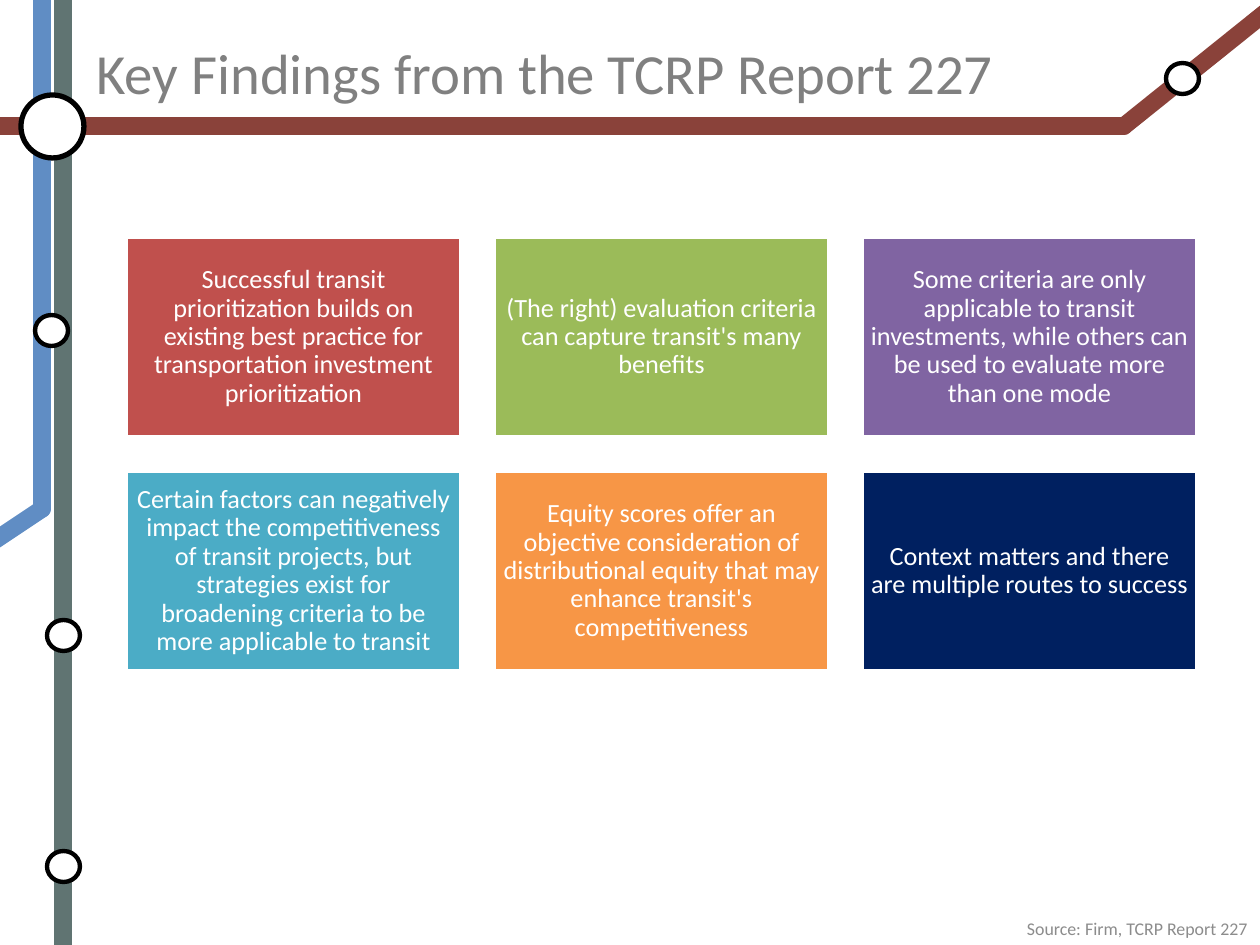
"""Build the key findings slide with its transit map frame and six finding cards."""
from dataclasses import dataclass

from lxml.etree import SubElement
from pptx import Presentation
from pptx.dml.color import RGBColor
from pptx.enum.shapes import MSO_CONNECTOR, MSO_SHAPE
from pptx.enum.text import MSO_ANCHOR, MSO_AUTO_SIZE, PP_ALIGN
from pptx.oxml.ns import qn
from pptx.util import Emu, Pt

TITLE = "Key Findings from the TCRP Report 227"
SOURCE = "Source: Firm, TCRP Report 227"
FINDINGS = [
    ("Successful transit prioritization builds on existing best practice for "
     "transportation investment prioritization", "C0504D"),
    ("(The right) evaluation criteria can capture transit's many benefits", "9BBB59"),
    ("Some criteria are only applicable to transit investments, while others can "
     "be used to evaluate more than one mode", "8064A2"),
    ("Certain factors can negatively impact the competitiveness of transit projects, "
     "but strategies exist for broadening criteria to be more applicable to transit", "4BACC6"),
    ("Equity scores offer an objective consideration of distributional equity "
     "that may enhance transit's competitiveness", "F79646"),
    ("Context matters and there are multiple routes to success", "002060"),
]
ROUTES = [
    ("607472", [(63, 945), (63, 0)]),
    ("608DC4", [(42, 0), (42, 509), (-21, 551)]),
    ("8A423A", [(0, 126), (1124, 126), (1281, 0)]),
]
STATIONS = [
    (21, 95, 63, 63, 3),
    (47, 620, 33, 31, 2.5),
    (47, 851, 33, 31, 2.5),
    (35, 315, 33, 31, 2.5),
    (1166, 63, 33, 31, 2.5),
]
COLUMNS = 3
CARD_LEFT, CARD_TOP, CARD_WIDTH, CARD_HEIGHT = 126, 237, 335, 200
COLUMN_STEP, ROW_STEP, CARD_INSET = 368, 234, 8


@dataclass(frozen=True)
class Theme:
    font: str = "Calibri"
    white: str = "FFFFFF"
    black: str = "000000"
    title: str = "808080"
    source: str = "8C8C8C"
    title_size: float = 32.4
    card_size: float = 15
    source_size: float = 10.2
    route_width: float = 10
    card_border: float = 2


THEME = Theme()


def px(value):
    return Emu(round(value * 914400 / 126))


def color(value):
    return RGBColor.from_string(value)


def write(box, text, size, ink, align, anchor):
    frame = box.text_frame
    frame.word_wrap = True
    frame.auto_size = MSO_AUTO_SIZE.NONE
    frame.vertical_anchor = anchor
    para = frame.paragraphs[0]
    para.text = text
    para.alignment = align
    para.font.name = THEME.font
    para.font.size = Pt(size)
    para.font.color.rgb = color(ink)
    return para


def add_route(page, ink, stops):
    for start, end in zip(stops, stops[1:]):
        route = page.shapes.add_connector(
            MSO_CONNECTOR.STRAIGHT, *map(px, (*start, *end)))
        route.line.color.rgb = color(ink)
        route.line.width = Pt(THEME.route_width)
        properties = route.element.spPr
        properties.find(qn("a:ln")).set("cap", "rnd")
        SubElement(properties, qn("a:effectLst"))


def add_outlined(page, kind, bounds, fill, border, width):
    shape = page.shapes.add_shape(kind, *map(px, bounds))
    shape.shadow.inherit = False
    shape.fill.solid()
    shape.fill.fore_color.rgb = color(fill)
    shape.line.color.rgb = color(border)
    shape.line.width = Pt(width)
    return shape


def add_card(page, index, text, fill):
    row, column = divmod(index, COLUMNS)
    bounds = (CARD_LEFT + column * COLUMN_STEP, CARD_TOP + row * ROW_STEP,
              CARD_WIDTH, CARD_HEIGHT)
    card = add_outlined(page, MSO_SHAPE.RECTANGLE, bounds, fill,
                        THEME.white, THEME.card_border)
    frame = card.text_frame
    frame.margin_left = frame.margin_right = px(CARD_INSET)
    frame.margin_top = frame.margin_bottom = px(CARD_INSET)
    para = write(card, text, THEME.card_size, THEME.white,
                 PP_ALIGN.CENTER, MSO_ANCHOR.MIDDLE)
    para.line_spacing = 0.9


def main():
    deck = Presentation()
    deck.slide_width, deck.slide_height = px(1260), px(945)
    page = deck.slides.add_slide(deck.slide_layouts[5])

    for ink, stops in ROUTES:
        add_route(page, ink, stops)
    for *bounds, width in STATIONS:
        add_outlined(page, MSO_SHAPE.OVAL, bounds, THEME.white, THEME.black, width)

    title = page.shapes.title
    title.left, title.top, title.width, title.height = map(px, (84, 38, 1040, 67))
    write(title, TITLE, THEME.title_size, THEME.title, PP_ALIGN.LEFT, MSO_ANCHOR.MIDDLE)

    for index, (text, fill) in enumerate(FINDINGS):
        add_card(page, index, text, fill)

    source = page.shapes.add_textbox(*map(px, (914, 914, 346, 31)))
    para = write(source, SOURCE, THEME.source_size, THEME.source,
                 PP_ALIGN.RIGHT, MSO_ANCHOR.TOP)
    para.line_spacing = 0.9

    deck.save("out.pptx")


if __name__ == "__main__":
    main()
